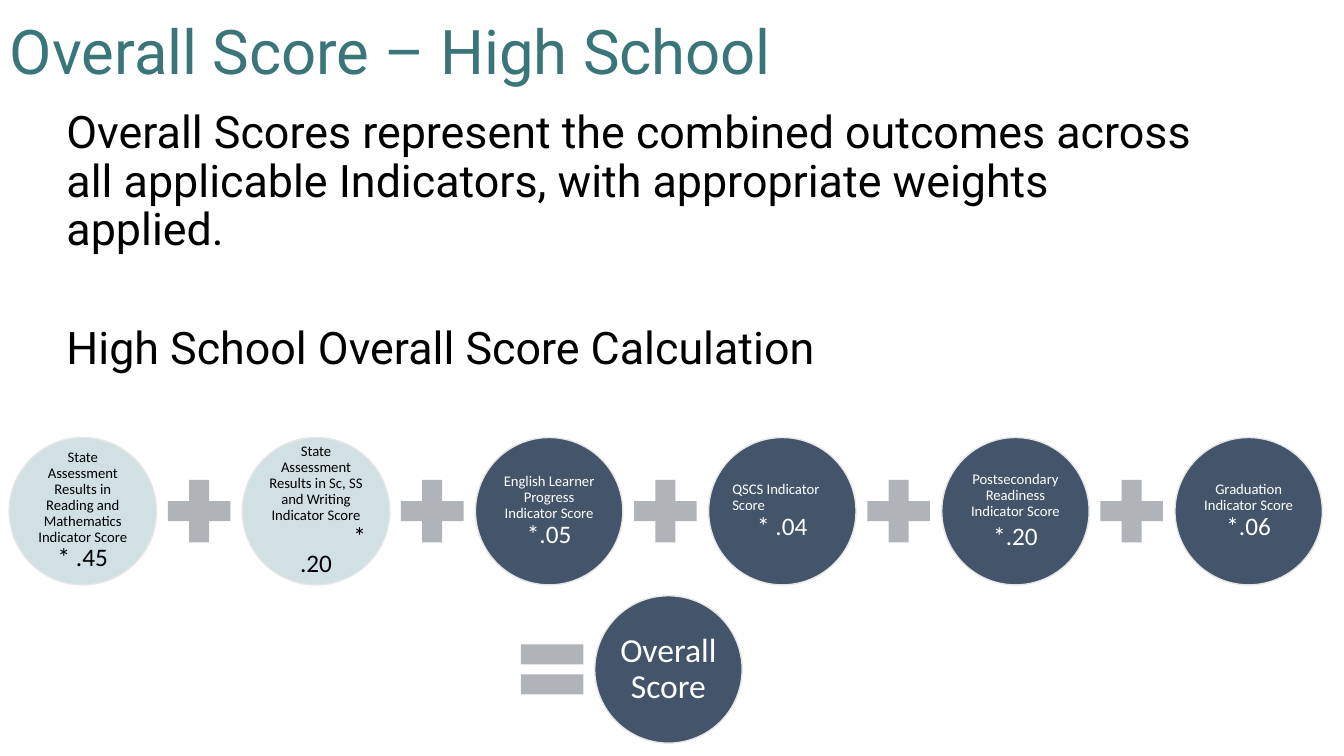
from dataclasses import dataclass

from pptx import Presentation
from pptx.dml.color import RGBColor
from pptx.enum.shapes import MSO_SHAPE
from pptx.enum.text import MSO_ANCHOR, PP_ALIGN
from pptx.util import Pt

# Content
TITLE = "Overall Score – High School"
INTRO = ("Overall Scores represent the combined outcomes across all applicable "
         "Indicators, with appropriate weights applied.")
SUBHEAD = "High School Overall Score Calculation"
RESULT = "Overall Score"
LEFT, CENTER, RIGHT = PP_ALIGN.LEFT, PP_ALIGN.CENTER, PP_ALIGN.RIGHT

# Indicator label, its alignment, weight lines with alignment, gap above weight, state test
INDICATORS = [
    ("State Assessment Results in Reading and Mathematics Indicator Score",
     CENTER, [("* .45", CENTER)], 0, True),
    ("State Assessment Results in Sc, SS and Writing Indicator Score",
     CENTER, [("*", RIGHT), (".20", CENTER)], 0, True),
    ("English Learner Progress Indicator Score", CENTER, [("*.05", CENTER)], 0, False),
    ("QSCS Indicator Score", LEFT, [("* .04", CENTER)], 0, False),
    ("Postsecondary Readiness Indicator Score", CENTER, [("*.20", CENTER)], 3, False),
    ("Graduation Indicator Score", CENTER, [("*.06", CENTER)], 0, False),
]


@dataclass(frozen=True)
class Theme:
    heading_font: str = "Roboto"
    label_font: str = "Calibri"
    title: str = "3A757A"
    dark_text: str = "000000"
    light_text: str = "FFFFFF"
    state_fill: str = "D0E0E3"
    school_fill: str = "44546A"
    outline: str = "E7E6E6"
    sign: str = "B0B4B9"
    title_size: float = 44
    body_size: float = 32
    result_size: float = 24
    weight_size: float = 18
    label_size: float = 10.5


theme = Theme()

# Layout in points
ROW_LEFT, ROW_TOP, PITCH = 6.5, 312.5, 166.55
RESULT_LEFT, RESULT_TOP = 424.8, 425.5
CIRCLE, SIGN = 105.3, 60.8
SIGN_DROP = (CIRCLE - SIGN) / 2

deck = Presentation()
deck.slide_width, deck.slide_height = Pt(960), Pt(540)
page = deck.slides.add_slide(deck.slide_layouts[6])


def write(frame, lines, font, color):
    """Fill a frame with (text, size, alignment, space before) lines."""
    frame.word_wrap = True
    for number, (text, size, alignment, gap) in enumerate(lines):
        para = frame.add_paragraph() if number else frame.paragraphs[0]
        para.text = text
        para.alignment = alignment
        para.line_spacing = 0.9
        para.space_before = Pt(gap)
        for span in para.runs:
            span.font.name = font
            span.font.size = Pt(size)
            span.font.color.rgb = RGBColor.from_string(color)


def add_text(left, top, width, height, lines, color, anchor):
    box = page.shapes.add_textbox(Pt(left), Pt(top), Pt(width), Pt(height))
    box.text_frame.vertical_anchor = anchor
    write(box.text_frame, lines, theme.heading_font, color)
    return box


def add_shape(kind, left, top, size, fill):
    shape = page.shapes.add_shape(kind, Pt(left), Pt(top), Pt(size), Pt(size))
    shape.shadow.inherit = False
    shape.fill.solid()
    shape.fill.fore_color.rgb = RGBColor.from_string(fill)
    shape.line.fill.background()
    return shape


def add_circle(left, top, fill, color, lines, inset):
    circle = add_shape(MSO_SHAPE.OVAL, left, top, CIRCLE, fill)
    circle.line.color.rgb = RGBColor.from_string(theme.outline)
    circle.line.width = Pt(1)
    frame = circle.text_frame
    frame.margin_left = frame.margin_right = Pt(inset)
    frame.margin_top = frame.margin_bottom = Pt(inset)
    frame.vertical_anchor = MSO_ANCHOR.MIDDLE
    write(frame, lines, theme.label_font, color)


# Title and introduction
add_text(0, -13, 828, 104.4, [(TITLE, theme.title_size, LEFT, 0)],
         theme.title, MSO_ANCHOR.MIDDLE)
body = add_text(42.5, 75.6, 828, 178.6,
                [(INTRO, theme.body_size, LEFT, 8), (SUBHEAD, theme.body_size, LEFT, 50)],
                theme.dark_text, MSO_ANCHOR.TOP)
body.text_frame.margin_left = body.text_frame.margin_right = Pt(5)
body.text_frame.margin_top = body.text_frame.margin_bottom = Pt(3)

# Weighted indicators joined by plus signs
for index, (label, alignment, weights, gap, is_state) in enumerate(INDICATORS):
    left = ROW_LEFT + index * PITCH
    if index:
        add_shape(MSO_SHAPE.MATH_PLUS, left - PITCH + CIRCLE, ROW_TOP + SIGN_DROP,
                  SIGN, theme.sign)
    lines = [(label, theme.label_size, alignment, 0)]
    lines += [(text, theme.weight_size, side, gap) for text, side in weights]
    add_circle(left, ROW_TOP,
               theme.state_fill if is_state else theme.school_fill,
               theme.dark_text if is_state else theme.light_text, lines, 1.5)

# Result
add_shape(MSO_SHAPE.MATH_EQUAL, RESULT_LEFT - SIGN, RESULT_TOP + SIGN_DROP, SIGN, theme.sign)
add_circle(RESULT_LEFT, RESULT_TOP, theme.school_fill, theme.light_text,
           [(RESULT, theme.result_size, CENTER, 0)], 2)

deck.save("out.pptx")
